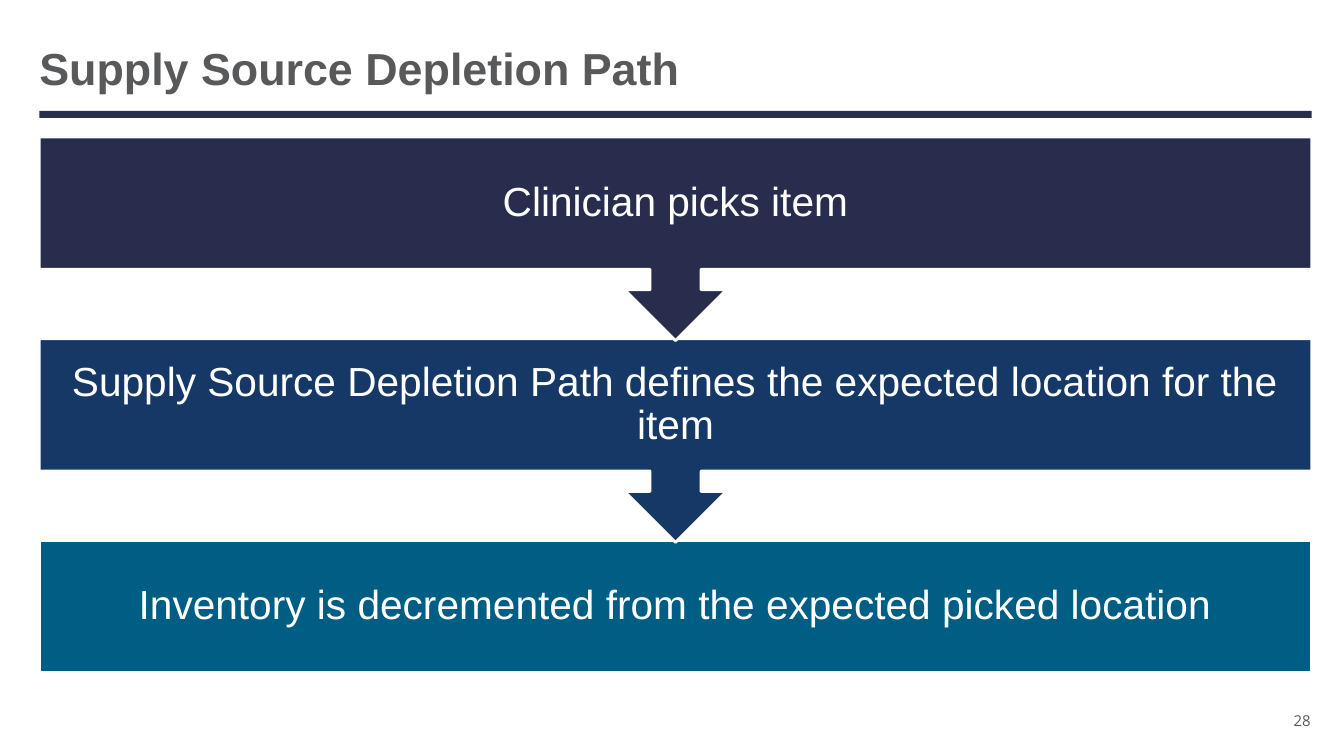
from pptx import Presentation
from pptx.dml.color import RGBColor
from pptx.enum import shapes, text
from pptx.util import Inches, Pt

COLOURS = {"navy": "282D4E", "blue": "153867", "teal": "005D83",
           "grey": "58595B", "white": "FFFFFF"}
LEFT, WIDTH = 0.39, 12.62
STEP_TOP, STEP_PITCH = 1.36, 2.0
BODY_HEIGHT, CALLOUT_HEIGHT = 1.31, 2.02


class SlideBuilder:
    """Holds the shared style and the current slide."""

    def __init__(self, page):
        self.page = page

    def colour(self, name):
        return RGBColor.from_string(COLOURS[name])

    def set_text(self, box, wording, size, colour, align, insets,
                 font="Arial", bold=False, spacing=1.0):
        frame = box.text_frame
        side, end = Inches(insets[0]), Inches(insets[1])
        frame_format = {"word_wrap": True,
                        "vertical_anchor": text.MSO_ANCHOR.MIDDLE,
                        "margin_left": side, "margin_right": side,
                        "margin_top": end, "margin_bottom": end}
        for name, value in frame_format.items():
            setattr(frame, name, value)
        para = frame.paragraphs[0]
        para.alignment = align
        para.line_spacing = spacing
        span = para.add_run()
        span.text = wording
        for name, value in {"name": font, "size": Pt(size), "bold": bold}.items():
            setattr(span.font, name, value)
        span.font.color.rgb = self.colour(colour)

    def label(self, place, wording, *style, **options):
        box = self.page.shapes.add_textbox(*map(Inches, place))
        self.set_text(box, wording, *style, **options)

    def block(self, kind, place, fill, outline=None):
        box = self.page.shapes.add_shape(kind, *map(Inches, place))
        box.shadow.inherit = False
        box.fill.solid()
        box.fill.fore_color.rgb = self.colour(fill)
        if outline:
            box.line.color.rgb = self.colour(outline)
            box.line.width = Pt(2)
        else:
            box.line.fill.background()
        return box

    def step(self, index, wording, fill, last):
        kind = shapes.MSO_SHAPE.RECTANGLE if last else shapes.MSO_SHAPE.DOWN_ARROW_CALLOUT
        height = BODY_HEIGHT if last else CALLOUT_HEIGHT
        place = (LEFT, STEP_TOP + index * STEP_PITCH, WIDTH, height)
        box = self.block(kind, place, fill, "white")
        self.set_text(box, wording, 29, "white", text.PP_ALIGN.CENTER,
                      (0.23, 0.23), spacing=0.9)


def main():
    deck = Presentation()
    deck.slide_width, deck.slide_height = Inches(13.33), Inches(7.5)
    builder = SlideBuilder(deck.slides.add_slide(deck.slide_layouts[6]))

    # Title and rule
    builder.block(shapes.MSO_SHAPE.RECTANGLE, (LEFT, 1.1, WIDTH, 0.07), "navy")
    builder.label((LEFT, 0.41, WIDTH, 0.61), "Supply Source Depletion Path",
                  32, "grey", text.PP_ALIGN.LEFT, (0, 0.05),
                  bold=True, spacing=0.85)

    # Steps, drawn from the bottom up so each arrow tip lies over the next step
    steps = [
        ("Clinician picks item", "navy"),
        ("Supply Source Depletion Path defines the expected location for the item", "blue"),
        ("Inventory is decremented from the expected picked location", "teal"),
    ]
    for index, (wording, fill) in reversed(list(enumerate(steps))):
        builder.step(index, wording, fill, last=index == len(steps) - 1)

    # Page number
    builder.label((12.5, 6.92, 0.5, 0.46), "28", 10.7, "grey",
                  text.PP_ALIGN.RIGHT, (0, 0), font="Open Sans")

    deck.save("out.pptx")


if __name__ == "__main__":
    main()
